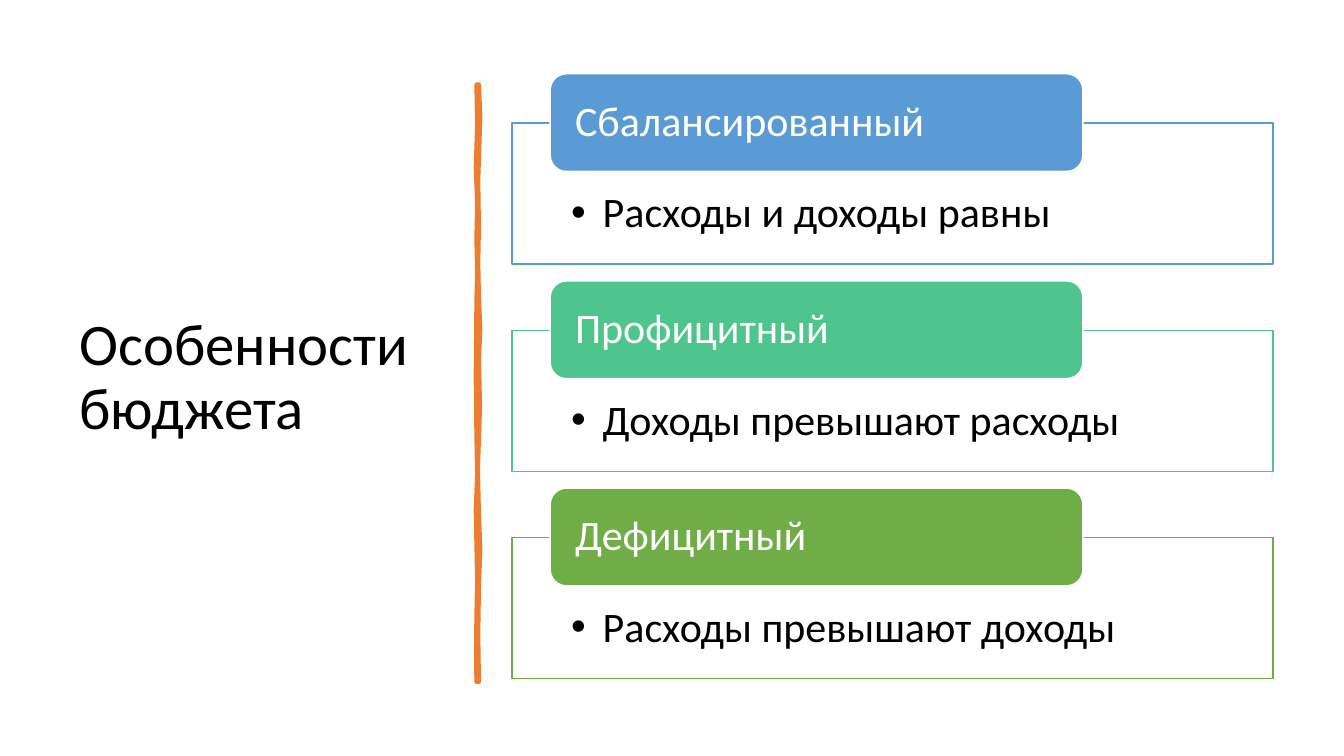
from pptx import Presentation
from pptx.dml.color import RGBColor
from pptx.enum.shapes import MSO_SHAPE as SHAPE
from pptx.enum.text import MSO_ANCHOR as ANCHOR, PP_ALIGN as ALIGN
from pptx.oxml.ns import qn
from pptx.util import Pt
from lxml.etree import SubElement

BLACK = RGBColor(0x00, 0x00, 0x00)
WHITE = RGBColor(0xFF, 0xFF, 0xFF)
ORANGE = RGBColor(0xED, 0x7D, 0x31)
BLUE = RGBColor(0x5B, 0x9B, 0xD5)
TEAL = RGBColor(0x4D, 0xC5, 0x8D)
GREEN = RGBColor(0x70, 0xAD, 0x47)

BUDGETS = [
    ("Сбалансированный", "Расходы и доходы равны", BLUE),
    ("Профицитный", "Доходы превышают расходы", TEAL),
    ("Дефицитный", "Расходы превышают доходы", GREEN),
]
FIRST_TOP = 52.7
BUDGET_STEP = 148
BOX_OFFSET = 35.2

BRUSH_RIGHT = [
    (342, 60.5), (343, 83), (341.5, 128), (342, 163), (341.5, 187),
    (342, 212), (343, 236), (342, 256), (342.8, 290), (341.3, 335),
    (342, 367), (343, 392), (342, 420), (341.5, 453), (342, 487),
]
BRUSH_LEFT = [
    (340.5, 487), (340.2, 464), (340.5, 441), (341, 415), (340.5, 388),
    (340, 364), (341, 339), (340.5, 310), (340, 270), (340.5, 216),
    (341, 194), (340.5, 171), (341, 145), (340, 120), (341, 90),
    (340.5, 60.5),
]


def set_text(s, text, size, color, anchor, margins):
    tf = s.text_frame
    tf.text = text
    tf.word_wrap = True
    tf.vertical_anchor = anchor
    tf.margin_left = tf.margin_right = Pt(margins[0])
    tf.margin_top = Pt(margins[1])
    tf.margin_bottom = Pt(margins[2])
    p = tf.paragraphs[0]
    p.alignment = ALIGN.LEFT
    p.line_spacing = 0.9
    font = p.runs[0].font
    font.name = "Calibri"
    font.size = Pt(size)
    font.color.rgb = color
    return p


def paint(s, fill, line, width):
    s.shadow.inherit = False
    s.fill.solid()
    s.fill.fore_color.rgb = fill
    s.line.color.rgb = line
    s.line.width = Pt(width)


def add_bullet(p, indent):
    pPr = p._p.get_or_add_pPr()
    pPr.set("marL", str(Pt(indent)))
    pPr.set("indent", str(-Pt(indent)))
    SubElement(pPr, qn("a:buFont")).set("typeface", "Arial")
    SubElement(pPr, qn("a:buChar")).set("char", "•")


def add_title(slide, text):
    s = slide.shapes.add_textbox(Pt(49.7), Pt(50.4), Pt(269.3), Pt(439.9))
    set_text(s, text, 42, BLACK, ANCHOR.MIDDLE, (7.2, 3.6, 3.6))


def add_brush_line(slide):
    start, *rest = [(Pt(x), Pt(y)) for x, y in BRUSH_RIGHT + BRUSH_LEFT]
    builder = slide.shapes.build_freeform(*start)
    builder.add_line_segments(rest, close=True)
    paint(builder.convert_to_shape(), ORANGE, ORANGE, 3.25)


def add_budget(slide, top, name, detail, color):
    box = slide.shapes.add_shape(
        SHAPE.RECTANGLE, Pt(365.8), Pt(top + BOX_OFFSET), Pt(543.6), Pt(100.8))
    paint(box, WHITE, color, 1)
    p = set_text(box, detail, 30, BLACK, ANCHOR.TOP, (42.2, 49, 16.6))
    add_bullet(p, 22.5)

    header = slide.shapes.add_shape(
        SHAPE.ROUNDED_RECTANGLE, Pt(393), Pt(top), Pt(380.5), Pt(69.8))
    paint(header, color, WHITE, 1)
    set_text(header, name, 30, WHITE, ANCHOR.MIDDLE, (14.4, 0, 0))


def main():
    prs = Presentation()
    prs.slide_width = Pt(960)
    prs.slide_height = Pt(540)
    slide = prs.slides.add_slide(prs.slide_layouts[6])
    add_title(slide, "Особенности бюджета")
    add_brush_line(slide)
    for i, budget in enumerate(BUDGETS):
        add_budget(slide, FIRST_TOP + i * BUDGET_STEP, *budget)
    prs.save("out.pptx")


if __name__ == "__main__":
    main()
